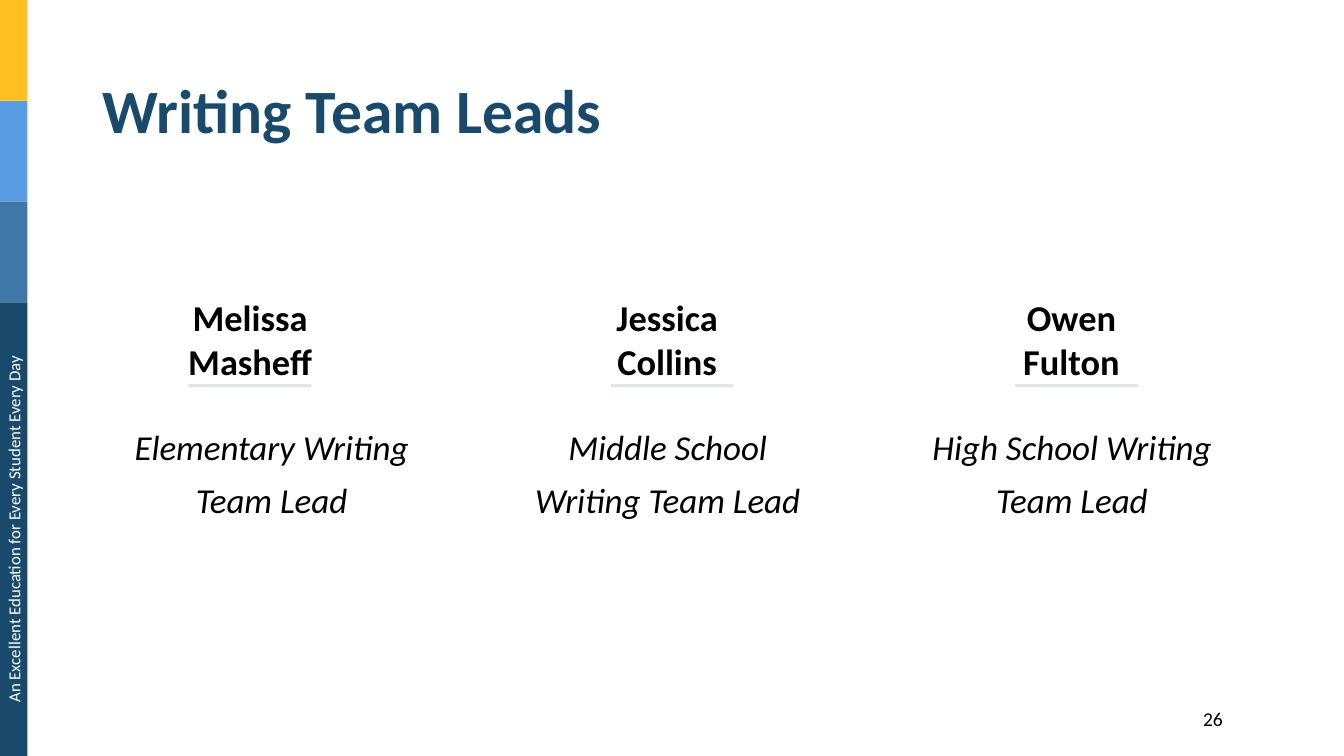
from pptx import Presentation
from pptx.dml.color import RGBColor
from pptx.enum.shapes import MSO_SHAPE
from pptx.enum.text import MSO_ANCHOR, PP_ALIGN
from pptx.util import Cm, Pt

RECT = MSO_SHAPE.RECTANGLE
LEFT, CENTER, RIGHT = PP_ALIGN.LEFT, PP_ALIGN.CENTER, PP_ALIGN.RIGHT
TOP, MIDDLE = MSO_ANCHOR.TOP, MSO_ANCHOR.MIDDLE

NAVY = RGBColor(0x19, 0x4A, 0x6B)
STEEL = RGBColor(0x3F, 0x78, 0xA7)
SKY = RGBColor(0x58, 0x9C, 0xE3)
GOLD = RGBColor(0xFF, 0xBF, 0x20)
GRAY = RGBColor(0xE2, 0xE6, 0xE8)
BLACK = RGBColor(0, 0, 0)
WHITE = RGBColor(0xFF, 0xFF, 0xFF)

# Name, role, left edge of the name, then offsets of rule and role from it
LEADS = [
    ("Melissa Masheff", "Elementary Writing Team Lead", 4.22, 0.53, -1.07),
    ("Jessica Collins", "Middle School Writing Team Lead", 14.73, 0.66, -1.6),
    ("Owen Fulton", "High School Writing Team Lead", 24.92, 0.66, -1.6),
]


def add_text(slide, text, left, top, width, height, size, color=BLACK,
             bold=False, italic=False, align=CENTER, anchor=TOP,
             space=1.0, inset=True, turn=0):
    box = slide.shapes.add_textbox(Cm(left), Cm(top), Cm(width), Cm(height))
    box.rotation = turn
    frame = box.text_frame
    frame.word_wrap = True
    frame.vertical_anchor = anchor
    if not inset:
        frame.margin_left = frame.margin_right = 0
        frame.margin_top = frame.margin_bottom = 0
    para = frame.paragraphs[0]
    para.alignment = align
    para.line_spacing = space
    run = para.add_run()
    run.text = text
    font = run.font
    font.name, font.size = "Calibri", Pt(size)
    font.bold, font.italic = bold, italic
    font.color.rgb = color


def add_bar(slide, left, top, width, height, color):
    bar = slide.shapes.add_shape(RECT, Cm(left), Cm(top), Cm(width), Cm(height))
    bar.shadow.inherit = False
    bar.fill.solid()
    bar.fill.fore_color.rgb = color
    bar.line.fill.background()


def add_side(slide, left, top, width, height):
    # Three short blocks, then one long block with the motto
    step = 2.54
    for i, color in enumerate((GOLD, SKY, STEEL)):
        add_bar(slide, left, top + i * step, width, step, color)
    start = top + 3 * step
    rest = height - 3 * step
    add_bar(slide, left, start, width, rest, NAVY)
    thick = 0.76
    add_text(slide, "An Excellent Education for Every Student Every Day",
             left + (width - rest) / 2, start + (rest - thick) / 2,
             rest, thick, 12, WHITE, turn=270)


def add_lead(slide, name, role, left, top, rule, shift):
    add_text(slide, name, left, top, 4.17, 1.02, 26, bold=True, inset=False)
    add_bar(slide, left + rule, top + 2.24, 3.1, 0.08, GRAY)
    add_text(slide, role, left + shift, top + 3.02, 7.39, 3.18, 25,
             italic=True, space=1.25, inset=False)


def main():
    deck = Presentation()
    deck.slide_width, deck.slide_height = Cm(33.87), Cm(19.05)
    slide = deck.slides.add_slide(deck.slide_layouts[6])

    # Side band and page number
    add_side(slide, 0, 0, 0.69, 19.05)
    add_text(slide, "26", 28.91, 17.68, 2.16, 0.86, 14, align=RIGHT)

    # Title
    add_text(slide, "Writing Team Leads", 2.34, 1.02, 29.21, 3.68, 44, NAVY,
             bold=True, align=LEFT, anchor=MIDDLE, space=0.9)

    # Team leads
    for name, role, left, rule, shift in LEADS:
        add_lead(slide, name, role, left, 7.44, rule, shift)

    deck.save("out.pptx")


if __name__ == "__main__":
    main()
